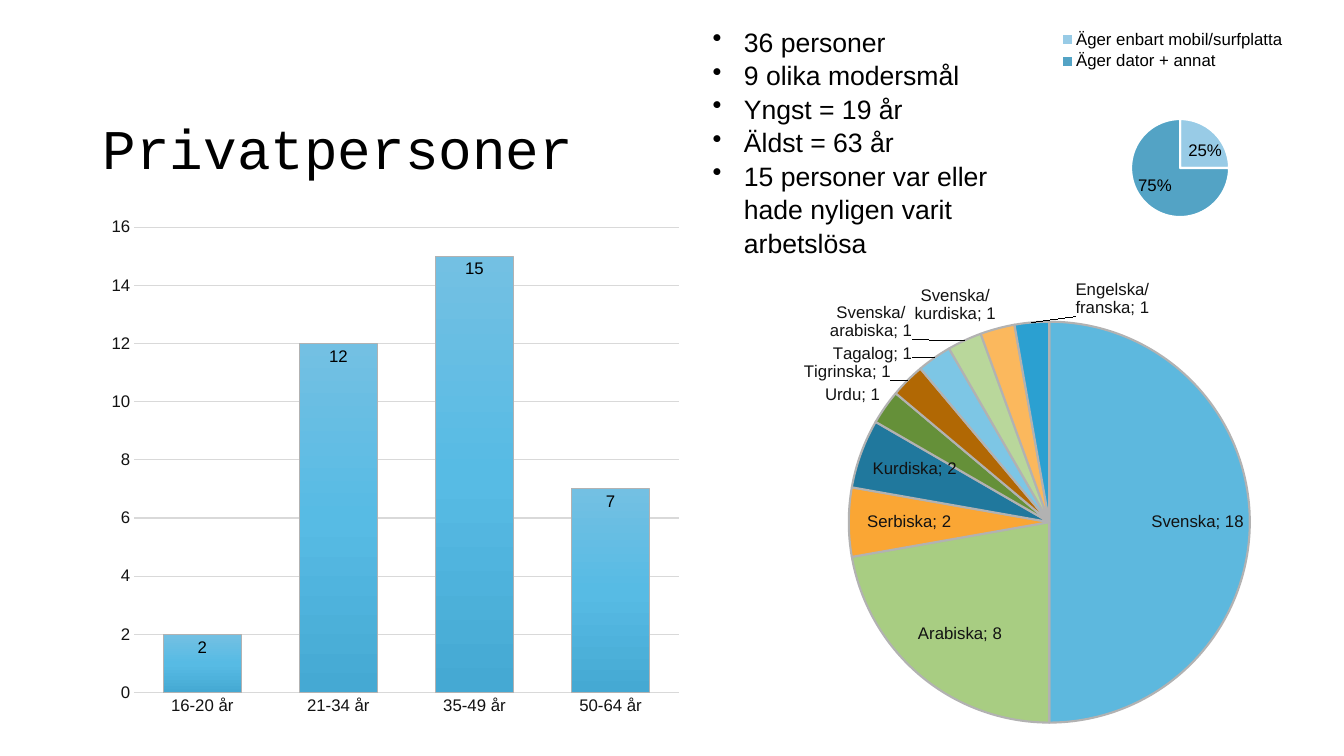
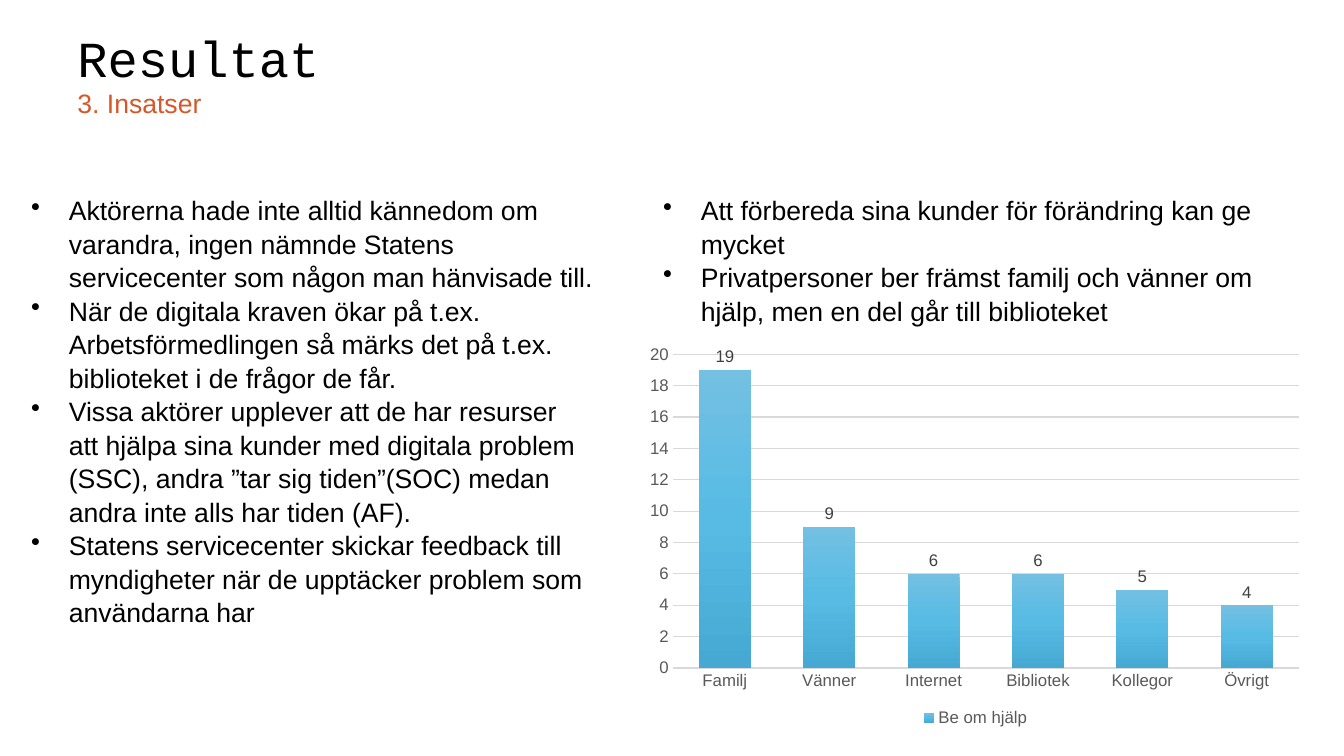
from dataclasses import dataclass

from lxml.etree import SubElement
from pptx import Presentation
from pptx.chart.data import CategoryChartData
from pptx.dml.color import RGBColor
from pptx.enum.chart import (XL_CHART_TYPE, XL_LABEL_POSITION,
                             XL_LEGEND_POSITION, XL_TICK_MARK)
from pptx.enum.text import MSO_ANCHOR
from pptx.oxml.ns import qn
from pptx.util import Inches, Pt

COLORS = {
    "text": "000000", "accent": "D5582B", "dark": "121212", "gray": "595959",
    "value": "404040", "grid": "D9D9D9", "edge": "B2B2B2", "white": "FFFFFF",
}
BAR_STOPS = ((0, "73C0E3"), (50, "57BBE4"), (100, "45A9D3"))
BODY_FONT, TITLE_FONT = "Arial", "Courier New"
BODY_SIZE, CHART_SIZE = 19, 12
WIDTH, HEIGHT = Inches(13.33), Inches(7.5)


@dataclass
class Box:
    """A frame in percent of the slide's width and height."""
    left: float
    top: float
    width: float
    height: float

    def emu(self) -> tuple[int, ...]:
        return tuple(int(share * side / 100) for share, side in
                     zip((self.left, self.top, self.width, self.height), (WIDTH, HEIGHT) * 2))


@dataclass
class Slice:
    name: str
    value: int
    color: str
    position: XL_LABEL_POSITION
    dx: float = 0
    dy: float = 0


@dataclass
class Columns:
    box: Box
    plot: tuple[float, float, float, float]
    name: str
    values: dict[str, int]
    top: int
    gap: int
    overlap: int
    text: str
    label_color: str
    label_position: XL_LABEL_POSITION
    edge: bool = False
    legend: bool = False


def rgb(name: str) -> RGBColor:
    return RGBColor.from_string(COLORS.get(name, name))


def style_font(font, color: str, size: float = CHART_SIZE, name: str = BODY_FONT) -> None:
    font.name, font.size = name, Pt(size)
    font.color.rgb = rgb(color)


def add_text(slide, box: Box, lines: list[str], color: str = "text",
             size: float = BODY_SIZE, font: str = BODY_FONT, spacing: float = 1.05,
             anchor: MSO_ANCHOR = MSO_ANCHOR.TOP, indent: float = 0) -> None:
    """Add a text box; an indent, in percent of the slide's width, gives bullets."""
    tf = slide.shapes.add_textbox(*box.emu()).text_frame
    tf.word_wrap, tf.vertical_anchor = True, anchor
    for i, line in enumerate(lines):
        p = tf.add_paragraph() if i else tf.paragraphs[0]
        p.text, p.line_spacing = line, spacing
        style_font(p.font, color, size, font)
        if indent:
            hang = int(WIDTH * indent / 100)
            pPr = p._p.get_or_add_pPr()
            pPr.set("marL", str(hang))
            pPr.set("indent", str(-hang))
            bullet = pPr.makeelement(qn("a:buChar"), {"char": "•"})
            pPr.insert_element_before(bullet, "a:tabLst", "a:defRPr", "a:extLst")


def add_title(slide, box: Box, text: str, size: float) -> None:
    add_text(slide, box, [text], size=size, font=TITLE_FONT, spacing=0.9,
             anchor=MSO_ANCHOR.BOTTOM)


def fill_layout(layout, **shares: float) -> None:
    for tag, share in shares.items():
        SubElement(layout, qn(f"c:{tag}"), val=str(share))


def place_plot(chart, plot: tuple[float, float, float, float]) -> None:
    """Fix the inner plot area, in shares of the chart."""
    area = chart._chartSpace.chart.plotArea
    for old in area.findall(qn("c:layout")):
        area.remove(old)
    layout = area.makeelement(qn("c:layout"))
    area.insert(0, layout)
    manual = SubElement(layout, qn("c:manualLayout"))
    SubElement(manual, qn("c:layoutTarget"), val="inner")
    SubElement(manual, qn("c:xMode"), val="edge")
    SubElement(manual, qn("c:yMode"), val="edge")
    fill_layout(manual, **dict(zip("xywh", plot)))


def add_chart(slide, kind: XL_CHART_TYPE, box: Box, plot: tuple[float, float, float, float],
              name: str, values: dict[str, int], color: str,
              legend: XL_LEGEND_POSITION | None = None):
    data = CategoryChartData()
    data.categories = list(values)
    data.add_series(name, list(values.values()))
    chart = slide.shapes.add_chart(kind, *box.emu(), data).chart
    chart.has_title = False
    style_font(chart.font, color)
    chart.plots[0].vary_by_categories = kind == XL_CHART_TYPE.PIE
    chart.has_legend = legend is not None
    if chart.has_legend:
        chart.legend.position = legend
        chart.legend.include_in_layout = False
        style_font(chart.legend.font, color)
    place_plot(chart, plot)
    return chart


def fill_gradient(series) -> None:
    fill = series.format.fill
    fill.gradient()
    fill.gradient_angle = 270
    stops = series._element.find(".//" + qn("a:gsLst"))
    for old in list(stops):
        stops.remove(old)
    for share, color in BAR_STOPS:
        stop = SubElement(stops, qn("a:gs"), pos=str(share * 1000))
        SubElement(stop, qn("a:srgbClr"), val=color)


def add_columns(slide, spec: Columns) -> None:
    chart = add_chart(slide, XL_CHART_TYPE.COLUMN_CLUSTERED, spec.box, spec.plot, spec.name,
                      spec.values, spec.text, XL_LEGEND_POSITION.BOTTOM if spec.legend else None)
    for axis in (chart.category_axis, chart.value_axis):
        axis.major_tick_mark = axis.minor_tick_mark = XL_TICK_MARK.NONE
        style_font(axis.tick_labels.font, spec.text)
    line = chart.category_axis.format.line
    line.color.rgb, line.width = rgb("grid"), Pt(1)
    axis = chart.value_axis
    axis.minimum_scale, axis.maximum_scale, axis.major_unit = 0, spec.top, 2
    axis.format.line.fill.background()
    line = axis.major_gridlines.format.line
    line.color.rgb, line.width = rgb("grid"), Pt(0.75)
    bars = chart.plots[0]
    bars.gap_width, bars.overlap = spec.gap, spec.overlap
    series = bars.series[0]
    fill_gradient(series)
    if spec.edge:
        series.format.line.color.rgb = rgb("edge")
        series.format.line.width = Pt(0.75)
    labels = series.data_labels
    labels.show_value, labels.position = True, spec.label_position
    style_font(labels.font, spec.label_color)


def label_slice(point, part: Slice, color: str, shown: tuple[str, ...]) -> None:
    """Label one slice, moved by shares of the chart."""
    label = point.data_label
    style_font(label.font, color)
    label.position = part.position
    dLbl = label._get_or_add_dLbl()
    for tag in ("showVal", "showCatName", "showPercent"):
        dLbl.find(qn(f"c:{tag}")).set("val", str(int(tag in shown)))
    SubElement(dLbl, qn("c:separator")).text = "; "
    if part.dx or part.dy:
        layout = dLbl.makeelement(qn("c:layout"))
        dLbl.insert(1, layout)
        fill_layout(SubElement(layout, qn("c:manualLayout")), x=part.dx, y=part.dy)


def add_pie(slide, box: Box, plot: tuple[float, float, float, float], slices: list[Slice],
            color: str, edge: str, edge_width: float, shown: tuple[str, ...],
            legend: XL_LEGEND_POSITION | None = None) -> None:
    chart = add_chart(slide, XL_CHART_TYPE.PIE, box, plot, "Series 1",
                      {part.name: part.value for part in slices}, color, legend)
    series = chart.plots[0].series[0]
    for i, part in enumerate(slices):
        point = series.points[i]
        point.format.fill.solid()
        point.format.fill.fore_color.rgb = rgb(part.color)
        point.format.line.color.rgb = rgb(edge)
        point.format.line.width = Pt(edge_width)
        label_slice(point, part, color, shown)


IN, OUT, MID = (XL_LABEL_POSITION.INSIDE_END, XL_LABEL_POSITION.OUTSIDE_END,
                XL_LABEL_POSITION.CENTER)
LANGUAGES = [
    Slice("Svenska", 18, "5DB8DE", IN),
    Slice("Arabiska", 8, "A8CD82", IN, -0.01, -0.06),
    Slice("Serbiska", 2, "FAA634", IN, 0.02),
    Slice("Kurdiska", 2, "20789D", IN, 0.01, 0.01),
    Slice("Urdu", 1, "659039", OUT),
    Slice("Tigrinska", 1, "B16804", OUT, -0.02, 0.01),
    Slice("Tagalog", 1, "7DC6E5", OUT, -0.03, 0.02),
    Slice("Svenska/arabiska", 1, "B9D79B", OUT, -0.08, 0.01),
    Slice("Svenska/kurdiska", 1, "FBB85D", OUT),
    Slice("Engelska/franska", 1, "2BA0D1", OUT, 0.13),
]
DEVICES = [
    Slice("Äger enbart mobil/surfplatta", 25, "98CBE6", MID, 0.03),
    Slice("Äger dator + annat", 75, "53A3C5", MID, -0.03),
]
AGES = Columns(
    Box(7.35, 27.33, 44.03, 68.4), (0.06, 0.04, 0.92, 0.9), "Series 1",
    {"16-20 år": 2, "21-34 år": 12, "35-49 år": 15, "50-64 år": 7},
    top=16, gap=75, overlap=40, text="dark", label_color="text", label_position=IN, edge=True)
HELPERS = Columns(
    Box(47.55, 44.8, 50.1, 51.87), (0.05, 0.04, 0.93, 0.8), "Be om hjälp",
    {"Familj": 19, "Vänner": 9, "Internet": 6, "Bibliotek": 6, "Kollegor": 5, "Övrigt": 4},
    top=20, gap=100, overlap=-24, text="gray", label_color="value", label_position=OUT,
    legend=True)
FACTS = [
    "36 personer", "9 olika modersmål", "Yngst = 19 år", "Äldst = 63 år",
    "15 personer var eller hade nyligen varit arbetslösa",
]
FINDINGS = [
    "Aktörerna hade inte alltid kännedom om varandra, ingen nämnde Statens servicecenter "
    "som någon man hänvisade till.",
    "När de digitala kraven ökar på t.ex. Arbetsförmedlingen så märks det på t.ex. "
    "biblioteket i de frågor de får.",
    "Vissa aktörer upplever att de har resurser att hjälpa sina kunder med digitala problem "
    "(SSC), andra ”tar sig tiden”(SOC) medan andra inte alls har tiden (AF).",
    "Statens servicecenter skickar feedback till myndigheter när de upptäcker problem som "
    "användarna har",
]
ADVICE = [
    "Att förbereda sina kunder för förändring kan ge mycket",
    "Privatpersoner ber främst familj och vänner om hjälp, men en del går till biblioteket",
]


def build_people(slide) -> None:
    add_title(slide, Box(6.9, 5.33, 43.13, 19.33), "Privatpersoner", 40)
    add_pie(slide, Box(51.38, 35.07, 46.43, 62.4), (0.25, 0.12, 0.65, 0.85), LANGUAGES,
            "dark", "edge", 1.5, ("showVal", "showCatName"))
    add_text(slide, Box(52.28, 2.53, 24.45, 33.6), FACTS, indent=2.34)
    add_columns(slide, AGES)
    add_pie(slide, Box(77.63, 2.53, 19.2, 29.87), (0.34, 0.44, 0.38, 0.44), DEVICES,
            "text", "white", 1.5, ("showPercent",), XL_LEGEND_POSITION.TOP)


def build_results(slide) -> None:
    add_text(slide, Box(1.58, 24.8, 43.28, 65.33), FINDINGS, indent=2.81)
    add_columns(slide, HELPERS)
    add_text(slide, Box(48.6, 24.8, 47.93, 22.67), ADVICE, indent=2.81)
    add_title(slide, Box(5.03, 3.73, 90.75, 8.67), "Resultat", 36)
    add_text(slide, Box(5.03, 10.67, 42.6, 5.6), ["3. Insatser"], color="accent")


def main() -> None:
    prs = Presentation()
    prs.slide_width, prs.slide_height = WIDTH, HEIGHT
    for build in (build_people, build_results):
        build(prs.slides.add_slide(prs.slide_layouts[6]))
    prs.save("out.pptx")


if __name__ == "__main__":
    main()
